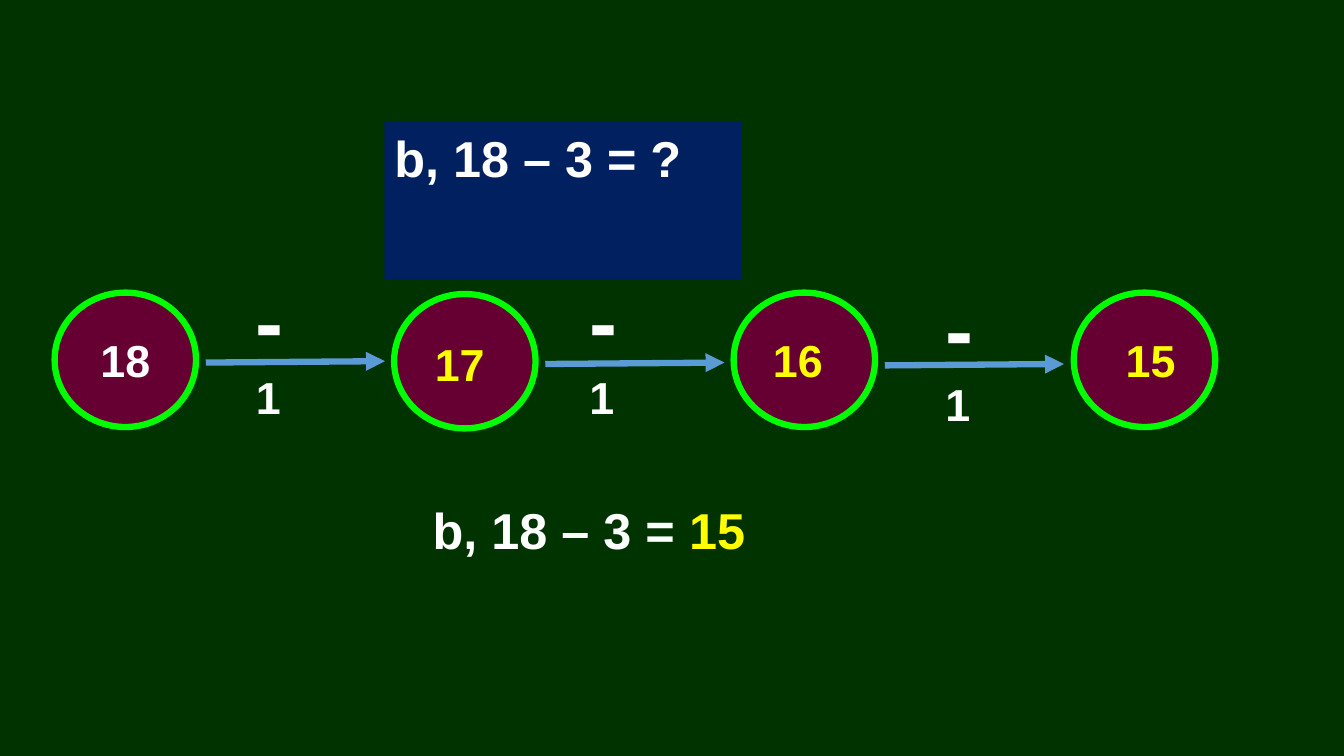
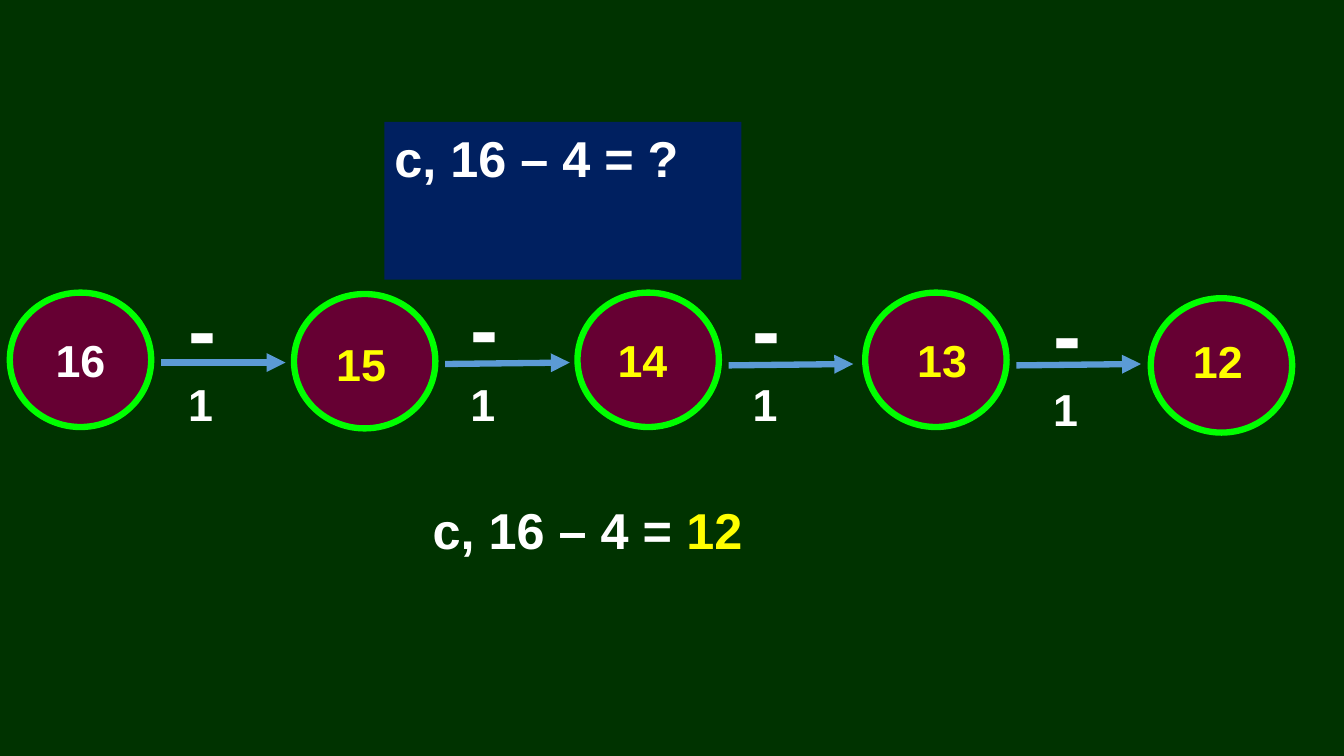
from dataclasses import dataclass

from lxml import etree
from pptx import Presentation
from pptx.dml.color import RGBColor
from pptx.enum.shapes import MSO_CONNECTOR, MSO_SHAPE
from pptx.enum.text import MSO_ANCHOR, MSO_AUTO_SIZE, PP_ALIGN
from pptx.oxml.ns import qn
from pptx.util import Pt

STRAIGHT = MSO_CONNECTOR.STRAIGHT
OVAL = MSO_SHAPE.OVAL
TOP, MIDDLE = MSO_ANCHOR.TOP, MSO_ANCHOR.MIDDLE
LEFT, CENTER = PP_ALIGN.LEFT, PP_ALIGN.CENTER
GROW = MSO_AUTO_SIZE.SHAPE_TO_FIT_TEXT

COLORS = {
    "background": "003300",
    "question": "002060",
    "circle": "660033",
    "ring": "00FF00",
    "arrow": "5B9BD5",
    "given": "FFFFFF",
    "result": "FFFF00",
}
FONT = "Arial"
CIRCLE_WIDTH, CIRCLE_HEIGHT = 101, 96
ARROW_OFFSET = 108
LINE_WIDTH = 4.5


@dataclass
class Step:
    circle_left: float
    circle_top: float
    number_offset: tuple
    arrow_start: float
    arrow_end: float
    label_left: float
    label_top: float


@dataclass
class Exercise:
    letter: str
    start: int
    first_left: float
    arrow_length: float
    steps: list


EXERCISES = [
    Exercise("b", 18, 39, 128, [
        Step(281.5, 210, (22, 27), 259, 258, 175.7, 188.6),
        Step(524, 209, (21, 25), 260, 259, 414, 188.6),
        Step(767, 209, (30, 25), 261, 260, 668.2, 193.7),
    ]),
    Exercise("c", 16, 7, 89, [
        Step(210, 210, (23, 27), 259, 259, 127.4, 193.7),
        Step(412.5, 209, (21.5, 25), 260, 259, 329, 193.5),
        Step(618, 209, (30, 25), 261, 260, 530.6, 193.7),
        Step(822, 213, (23, 22), 261, 260, 745.2, 197.3),
    ]),
]


def rgb(name):
    return RGBColor.from_string(COLORS[name])


def box(left, top, width, height):
    return Pt(left), Pt(top), Pt(width), Pt(height)


def set_font(font, size, color):
    font.name = FONT
    font.size = Pt(size)
    font.bold = True
    font.color.rgb = rgb(color)


def add_question(slide, text):
    title = slide.shapes.title
    title.left, title.top, title.width, title.height = box(274.5, 87, 255, 51)
    title.fill.solid()
    title.fill.fore_color.rgb = rgb("question")
    frame = title.text_frame
    frame.text = text
    frame.vertical_anchor = TOP
    frame.auto_size = GROW
    paragraph = frame.paragraphs[0]
    paragraph.alignment = LEFT
    set_font(paragraph.font, 36, "given")


def add_circle(slide, left, top):
    circle = slide.shapes.add_shape(OVAL, *box(left, top, CIRCLE_WIDTH, CIRCLE_HEIGHT))
    circle.shadow.inherit = False
    circle.fill.solid()
    circle.fill.fore_color.rgb = rgb("circle")
    circle.line.color.rgb = rgb("ring")
    circle.line.width = Pt(LINE_WIDTH)
    return circle


def add_start_circle(slide, left, number):
    frame = add_circle(slide, left, 209).text_frame
    frame.text = str(number)
    frame.vertical_anchor = MIDDLE
    paragraph = frame.paragraphs[0]
    paragraph.alignment = CENTER
    set_font(paragraph.font, 32, "given")


def add_text(slide, position, runs):
    frame = slide.shapes.add_textbox(*box(*position)).text_frame
    frame.word_wrap = True
    frame.auto_size = GROW
    for text, size, color in runs:
        run = frame.paragraphs[0].add_run()
        run.text = text
        set_font(run.font, size, color)


def add_arrow(slide, left, start_top, length, end_top):
    arrow = slide.shapes.add_connector(
        STRAIGHT, Pt(left), Pt(start_top), Pt(left + length), Pt(end_top)
    )
    arrow.line.color.rgb = rgb("arrow")
    arrow.line.width = Pt(LINE_WIDTH)
    properties = arrow.element.spPr
    etree.SubElement(properties.find(qn("a:ln")), qn("a:tailEnd"), type="triangle")
    etree.SubElement(properties, qn("a:effectLst"))


def add_step(slide, step, number, previous_left, arrow_length):
    add_arrow(slide, previous_left + ARROW_OFFSET, step.arrow_start,
              arrow_length, step.arrow_end)
    add_text(slide, (step.label_left, step.label_top, 51.7, 80),
             [("-", 60, "given"), ("1", 32, "given")])
    add_circle(slide, step.circle_left, step.circle_top)
    across, down = step.number_offset
    add_text(slide, (step.circle_left + across, step.circle_top + down, 70, 46),
             [(str(number), 32, "result")])


def add_exercise(presentation, exercise):
    slide = presentation.slides.add_slide(presentation.slide_layouts.get_by_name("Title Only"))
    subtrahend = len(exercise.steps)
    equation = f"{exercise.letter}, {exercise.start} – {subtrahend} = "
    add_question(slide, equation + "?")
    add_start_circle(slide, exercise.first_left, exercise.start)
    previous_left = exercise.first_left
    for count, step in enumerate(exercise.steps, 1):
        add_step(slide, step, exercise.start - count, previous_left, exercise.arrow_length)
        previous_left = step.circle_left
    add_text(slide, (302, 353, 255, 51),
             [(equation, 36, "given"), (str(exercise.start - subtrahend), 36, "result")])


def main():
    presentation = Presentation()
    presentation.slide_width = Pt(960)
    presentation.slide_height = Pt(540)
    background = presentation.slide_master.background.fill
    background.solid()
    background.fore_color.rgb = rgb("background")
    for exercise in EXERCISES:
        add_exercise(presentation, exercise)
    presentation.save("out.pptx")


if __name__ == "__main__":
    main()
